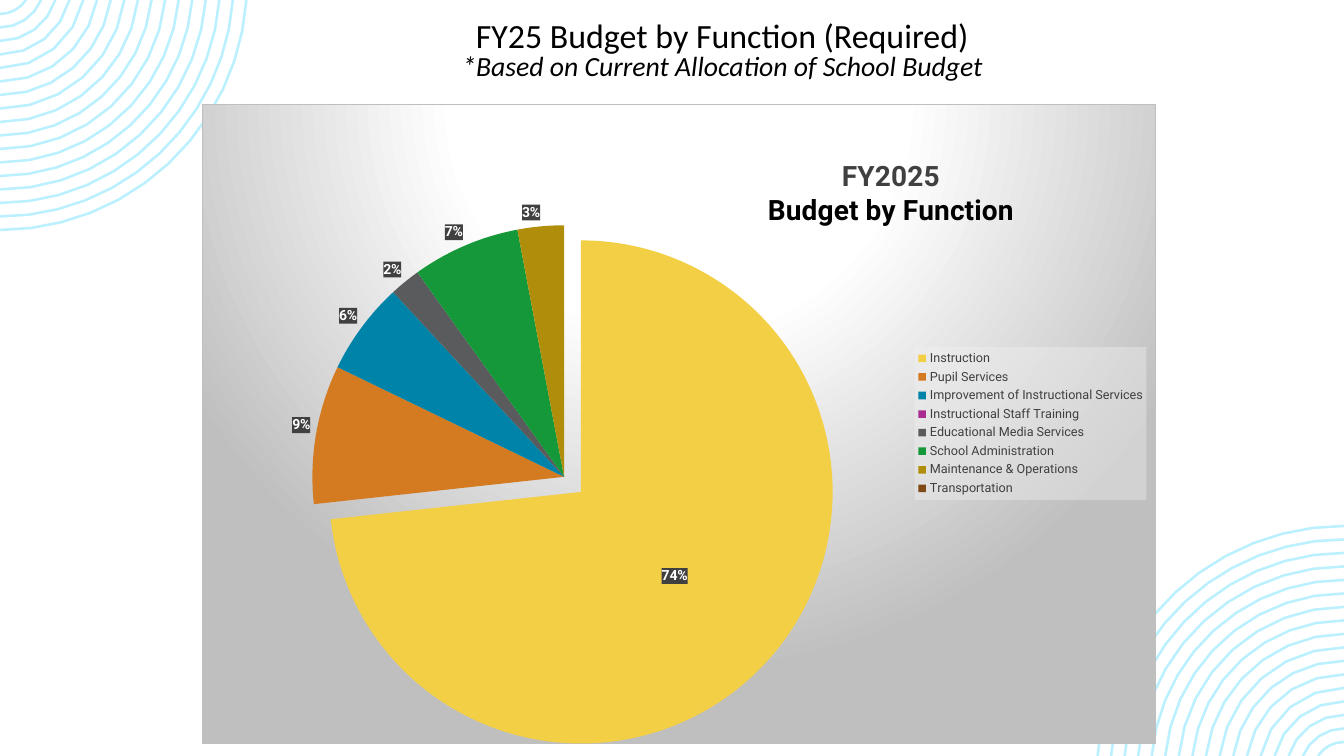
from copy import deepcopy
from math import asin, cos, pi, sin

from lxml import etree
from pptx import Presentation
from pptx.chart.data import CategoryChartData
from pptx.dml.color import RGBColor
from pptx.enum.chart import XL_CHART_TYPE, XL_LABEL_POSITION, XL_LEGEND_POSITION
from pptx.enum.text import MSO_ANCHOR, PP_ALIGN
from pptx.oxml import parse_xml
from pptx.oxml.ns import qn
from pptx.util import Pt

PIE = XL_CHART_TYPE.PIE
OUTSIDE = XL_LABEL_POSITION.OUTSIDE_END
RIGHT = XL_LEGEND_POSITION.RIGHT
MIDDLE = MSO_ANCHOR.MIDDLE
CENTER = PP_ALIGN.CENTER

SCALE = 914400 / 100.8
SLIDE_WIDTH, SLIDE_HEIGHT = 1344, 756
CHART_BOX = (202, 104, 954, 640)
TITLE_BOX = (269, 12, 907, 80)
RING_COUNT = 17

COLORS = {
    "rings": "BBF0FF",
    "black": "000000",
    "dark": "404040",
    "white": "FFFFFF",
    "gray": "BFBFBF",
    "legend": "F2F2F2",
}

BUDGET = [
    ("Instruction", 74, "F3CF45"),
    ("Pupil Services", 9, "D47B22"),
    ("Improvement of Instructional Services", 6, "0083A9"),
    ("Instructional Staff Training", 0, "A92A91"),
    ("Educational Media Services", 2, "595B5D"),
    ("School Administration", 7, "159839"),
    ("Maintenance & Operations", 3, "B08E0B"),
    ("Transportation", 0, "7F4A14"),
]

NAMESPACES = (
    'xmlns:c="http://schemas.openxmlformats.org/drawingml/2006/chart" '
    'xmlns:a="http://schemas.openxmlformats.org/drawingml/2006/main"'
)


def px(value):
    return round(value * SCALE)


def rgb(name):
    return RGBColor.from_string(COLORS[name])


def set_font(font, color, **values):
    for name, value in values.items():
        setattr(font, name, value)
    font.color.rgb = rgb(color)


def add_rings(slide, center_x, center_y, direction):
    builder = None
    for ring in range(RING_COUNT):
        radius = 247 - 13.5 * ring
        steps = max(4, round(radius / 20))
        start = asin(17 / radius)
        angles = [start + (pi / 2 - start) * step / steps for step in range(steps + 1)]
        arc = [(px(center_x + direction * radius * cos(angle)),
                px(center_y + direction * (radius * sin(angle) - 17)))
               for angle in angles]
        if builder is None:
            builder = slide.shapes.build_freeform(*arc[0])
        else:
            builder.move_to(*arc[0])
        builder.add_line_segments(arc[1:], close=False)
    shape = builder.convert_to_shape()
    shape.shadow.inherit = False
    shape.fill.background()
    shape.line.color.rgb = rgb("rings")
    shape.line.width = Pt(1.8)


def add_lines(text_frame, lines):
    for index, (text, color, values) in enumerate(lines):
        paragraph = text_frame.paragraphs[0] if index == 0 else text_frame.add_paragraph()
        paragraph.alignment = CENTER
        run = paragraph.add_run()
        run.text = text
        set_font(run.font, color, **values)


def format_title(slide):
    title = slide.shapes.title
    title.left, title.top, title.width, title.height = map(px, TITLE_BOX)
    frame = title.text_frame
    frame.vertical_anchor = MIDDLE
    add_lines(frame, [
        ("FY25 Budget by Function (Required)", "black",
         {"size": Pt(24.2), "name": "Calibri"}),
        ("*Based on Current Allocation of School Budget", "black",
         {"size": Pt(19.8), "name": "Calibri", "italic": True}),
    ])
    for paragraph in frame.paragraphs:
        paragraph.line_spacing = 0.8
        paragraph.space_before = Pt(0)


def place(element, index, left, top, width=None, height=None, inner=False):
    for layout in element.findall(qn("c:layout")):
        element.remove(layout)
    target = '<c:layoutTarget val="inner"/>' if inner else ""
    sizes = {"x": (left - CHART_BOX[0]) / CHART_BOX[2],
             "y": (top - CHART_BOX[1]) / CHART_BOX[3]}
    if width:
        sizes.update(w=width / CHART_BOX[2], h=height / CHART_BOX[3])
    modes = "".join(f'<c:{axis}Mode val="edge"/>' for axis in "xy")
    values = "".join(f'<c:{name} val="{value:.4f}"/>' for name, value in sizes.items())
    element.insert(index, parse_xml(
        f"<c:layout {NAMESPACES}><c:manualLayout>{target}{modes}{values}"
        "</c:manualLayout></c:layout>"))


def shape_properties(content):
    return parse_xml(f"<c:spPr {NAMESPACES}>{content}</c:spPr>")


def solid(name, extra=""):
    return f'<a:solidFill><a:srgbClr val="{COLORS[name]}">{extra}</a:srgbClr></a:solidFill>'


def format_background(chart):
    stops = "".join(
        f'<a:gs pos="{position * 1000}"><a:srgbClr val="{COLORS[name]}"/></a:gs>'
        for position, name in ((0, "white"), (39, "white"), (100, "gray")))
    chart.element.find(qn("c:chart")).addnext(shape_properties(
        f'<a:gradFill><a:gsLst>{stops}</a:gsLst><a:path path="circle">'
        '<a:fillToRect l="50000" t="-80000" r="50000" b="180000"/></a:path></a:gradFill>'
        f'<a:ln w="9525">{solid("gray")}</a:ln>'))


def format_points(series):
    for index, (_, _, color) in enumerate(BUDGET):
        fill = series.points[index].format.fill
        fill.solid()
        fill.fore_color.rgb = RGBColor.from_string(color)
    first = series._element.find(qn("c:dPt"))
    explosion = etree.Element(qn("c:explosion"), val="9")
    first.find(qn("c:spPr")).addprevious(explosion)


def format_labels(series):
    labels = series.data_labels
    formats = {"show_value": True, "show_percentage": False, "position": OUTSIDE,
               "number_format": '0"%"', "number_format_is_linked": False}
    for name, value in formats.items():
        setattr(labels, name, value)
    set_font(labels.font, "white", name="Roboto", size=Pt(10), bold=True)
    element = labels._element
    element.find(qn("c:txPr")).addprevious(shape_properties(solid("dark")))
    shared = [child for child in element if child.tag != qn("c:showLeaderLines")]
    special = []
    for index, (_, value, _) in enumerate(BUDGET):
        if index and value:
            continue
        label = parse_xml(f'<c:dLbl {NAMESPACES}><c:idx val="{index}"/></c:dLbl>')
        if value:
            label.extend(deepcopy(shared))
            label.find(qn("c:dLblPos")).set("val", "ctr")
        else:
            etree.SubElement(label, qn("c:delete"), val="1")
        special.append(label)
    element[0:0] = special


def add_budget_chart(slide):
    data = CategoryChartData()
    data.categories = [name for name, _, _ in BUDGET]
    data.add_series("Series 1", [value for _, value, _ in BUDGET])
    chart = slide.shapes.add_chart(PIE, *map(px, CHART_BOX), data).chart
    set_font(chart.font, "black", name="Roboto", size=Pt(10))
    format_background(chart)

    chart.has_title = True
    title_font = {"name": "Roboto", "size": Pt(20), "bold": True}
    add_lines(chart.chart_title.text_frame, [
        ("FY2025", "dark", title_font), ("Budget by Function", "black", title_font)])
    place(chart.chart_title._element, 1, 765, 155)

    chart.has_legend = True
    legend = chart.legend
    legend.position = RIGHT
    legend.include_in_layout = False
    set_font(legend.font, "dark", name="Roboto", size=Pt(9))
    place(legend._element, 1, 915, 347, 232, 153)
    legend._element.find(qn("c:txPr")).addprevious(
        shape_properties(solid("legend", '<a:alpha val="39000"/>')))

    plot = chart.plots[0]
    plot.vary_by_categories = True
    place(plot._element.getparent(), 0, 312, 225, 504, 504, inner=True)
    format_points(plot.series[0])
    format_labels(plot.series[0])


def main():
    presentation = Presentation()
    presentation.slide_width = px(SLIDE_WIDTH)
    presentation.slide_height = px(SLIDE_HEIGHT)
    slide = presentation.slides.add_slide(presentation.slide_layouts[5])
    add_rings(slide, 0, 0, 1)
    add_rings(slide, SLIDE_WIDTH, SLIDE_HEIGHT, -1)
    format_title(slide)
    add_budget_chart(slide)
    presentation.save("out.pptx")


if __name__ == "__main__":
    main()
